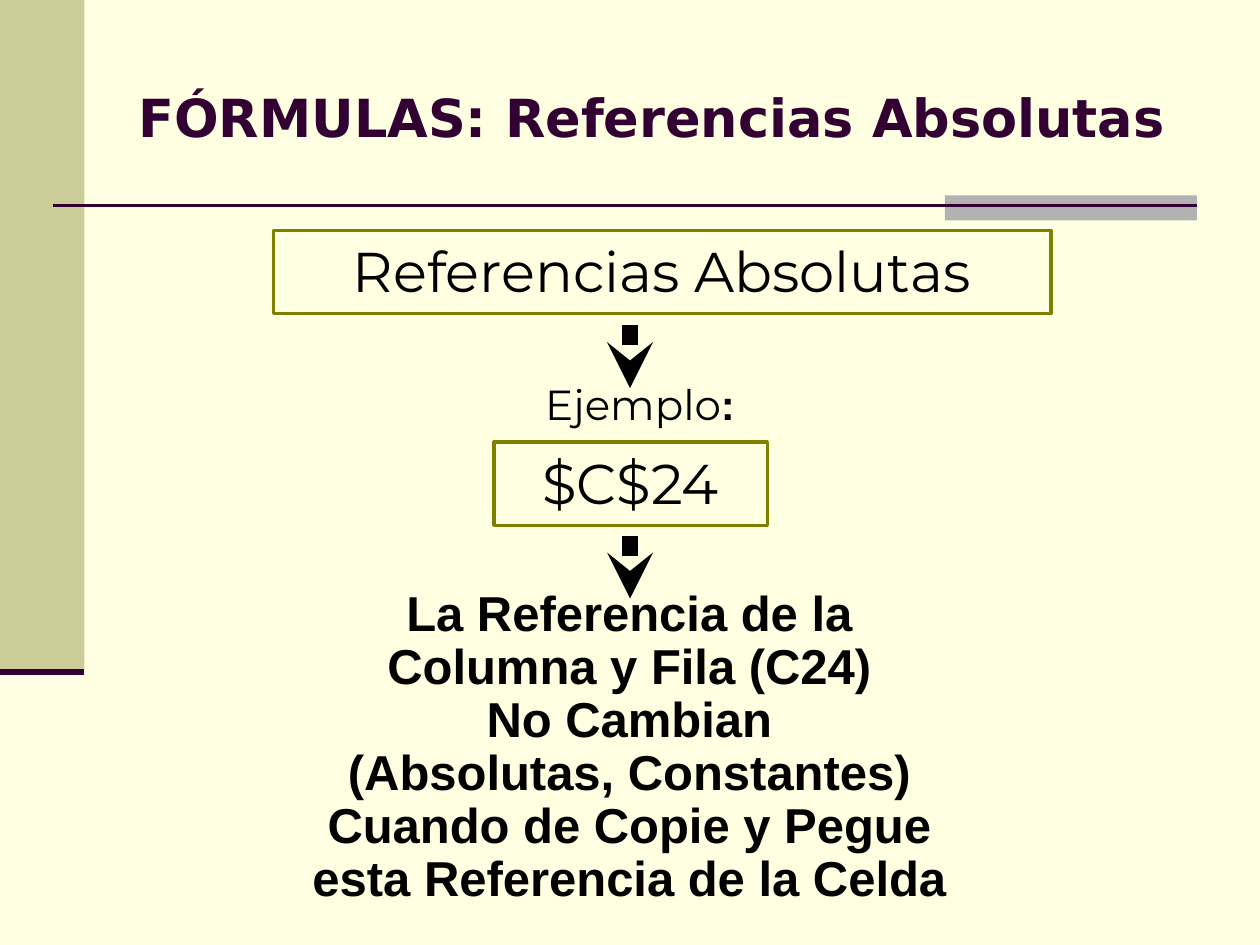
import pptx
import pptx.dml.color
import pptx.enum.shapes
import pptx.enum.text
import pptx.oxml.ns
import pptx.util
from lxml import etree

RGBColor = pptx.dml.color.RGBColor
CREAM = RGBColor(0xFF, 0xFF, 0xE1)
KHAKI = RGBColor(0xCC, 0xCC, 0x99)
GREY = RGBColor(0xB2, 0xB2, 0xB2)
PLUM = RGBColor(0x33, 0x00, 0x33)
OLIVE = RGBColor(0x80, 0x80, 0x00)
BLACK = RGBColor(0x00, 0x00, 0x00)

WIDTH, HEIGHT = 10, 7.5
CENTER = WIDTH / 2
SIDEBAR_WIDTH, SIDEBAR_HEIGHT = 0.67, 5.33
BOX_HEIGHT = 0.66
ARROW_LENGTH = 0.5
EXPLANATION = [
    "La Referencia de la",
    "Columna y Fila (C24)",
    "No Cambian",
    "(Absolutas, Constantes)",
    "Cuando de Copie y Pegue",
    "esta Referencia de la Celda",
]


def inches(*lengths):
    """Convert lengths in inches to slide units."""
    return [pptx.util.Inches(length) for length in lengths]


def add_rectangle(slide, area, fill=None, outline=None):
    """Add a flat rectangle with an optional fill and outline."""
    shape = slide.shapes.add_shape(
        pptx.enum.shapes.MSO_SHAPE.RECTANGLE, *inches(*area))
    shape.shadow.inherit = False
    if fill is None:
        shape.fill.background()
    else:
        shape.fill.solid()
        shape.fill.fore_color.rgb = fill
    if outline is None:
        shape.line.fill.background()
    else:
        shape.line.color.rgb = outline
        shape.line.width = pptx.util.Pt(2)
    return shape


def add_line(slide, start, end, color, width):
    """Add a straight line without shadow."""
    connector = slide.shapes.add_connector(
        pptx.enum.shapes.MSO_CONNECTOR.STRAIGHT, *inches(*start, *end))
    connector.line.color.rgb = color
    connector.line.width = pptx.util.Pt(width)
    etree.SubElement(connector._element.spPr, pptx.oxml.ns.qn("a:effectLst"))
    return connector


def add_down_arrow(slide, top):
    """Add a thick stealth arrow pointing down the centre line."""
    arrow = add_line(slide, (CENTER, top), (CENTER, top + ARROW_LENGTH), BLACK, 8.75)
    etree.SubElement(
        arrow.line._get_or_add_ln(), pptx.oxml.ns.qn("a:tailEnd"), type="stealth")


def write_text(shape, lines, size, font, color=BLACK, bold=False,
               centered=True, spacing=1.0, middle=False):
    """Write one paragraph per line in a common style."""
    frame = shape.text_frame
    frame.word_wrap = True
    anchor = pptx.enum.text.MSO_ANCHOR
    frame.vertical_anchor = anchor.MIDDLE if middle else anchor.TOP
    frame.text = "\n".join(lines)
    align = pptx.enum.text.PP_ALIGN
    for paragraph in frame.paragraphs:
        paragraph.alignment = align.CENTER if centered else align.LEFT
        paragraph.line_spacing = spacing
        paragraph.font.size = pptx.util.Pt(size)
        paragraph.font.name = font
        paragraph.font.bold = bold
        paragraph.font.color.rgb = color


def add_text(slide, area, lines, size, font, **style):
    """Add a text box and return it."""
    box = slide.shapes.add_textbox(*inches(*area))
    write_text(box, lines, size, font, **style)
    return box


def add_framed_text(slide, left, top, width, text):
    """Add a centred caption in an olive frame."""
    frame = add_rectangle(slide, (left, top, width, BOX_HEIGHT), outline=OLIVE)
    write_text(frame, [text], 32, "Montserrat")


def add_decoration(slide):
    """Add the sidebar, the grey accent and the title rule."""
    add_rectangle(slide, (0, 0, SIDEBAR_WIDTH, SIDEBAR_HEIGHT), fill=KHAKI)
    add_rectangle(slide, (7.5, 1.55, 2, 0.2), fill=GREY)
    add_line(slide, (0.42, 1.63), (9.5, 1.63), PLUM, 1.5)
    add_line(slide, (0, SIDEBAR_HEIGHT), (SIDEBAR_WIDTH, SIDEBAR_HEIGHT), PLUM, 3.5)


def add_example_label(slide):
    """Add the example label with its bold colon."""
    label = add_text(slide, (4.08, 3, 2, 0.46), ["Ejemplo"], 24, "Montserrat", spacing=0.9)
    colon = label.text_frame.paragraphs[0].add_run()
    colon.text = ":"
    colon.font.name = "Arial"
    colon.font.bold = True


def main():
    """Build the slide on absolute references."""
    presentation = pptx.Presentation()
    presentation.slide_width, presentation.slide_height = inches(WIDTH, HEIGHT)
    slide = presentation.slides.add_slide(presentation.slide_layouts[6])
    slide.background.fill.solid()
    slide.background.fill.fore_color.rgb = CREAM

    add_decoration(slide)
    add_text(slide, (1, 0.3, 8.5, 1.25), ["FÓRMULAS: Referencias Absolutas"], 30,
             "DejaVu Sans", color=PLUM, bold=True, centered=False, middle=True)
    add_down_arrow(slide, 2.58)
    add_framed_text(slide, 2.17, 1.83, 6.17, "Referencias Absolutas")
    add_example_label(slide)
    add_text(slide, (1.83, 4.63, 6.33, 2.62), EXPLANATION, 28, "Arial",
             bold=True, spacing=0.9)
    add_framed_text(slide, 3.92, 3.51, 2.17, "$C$24")
    add_down_arrow(slide, 4.25)
    presentation.save("out.pptx")


if __name__ == "__main__":
    main()
